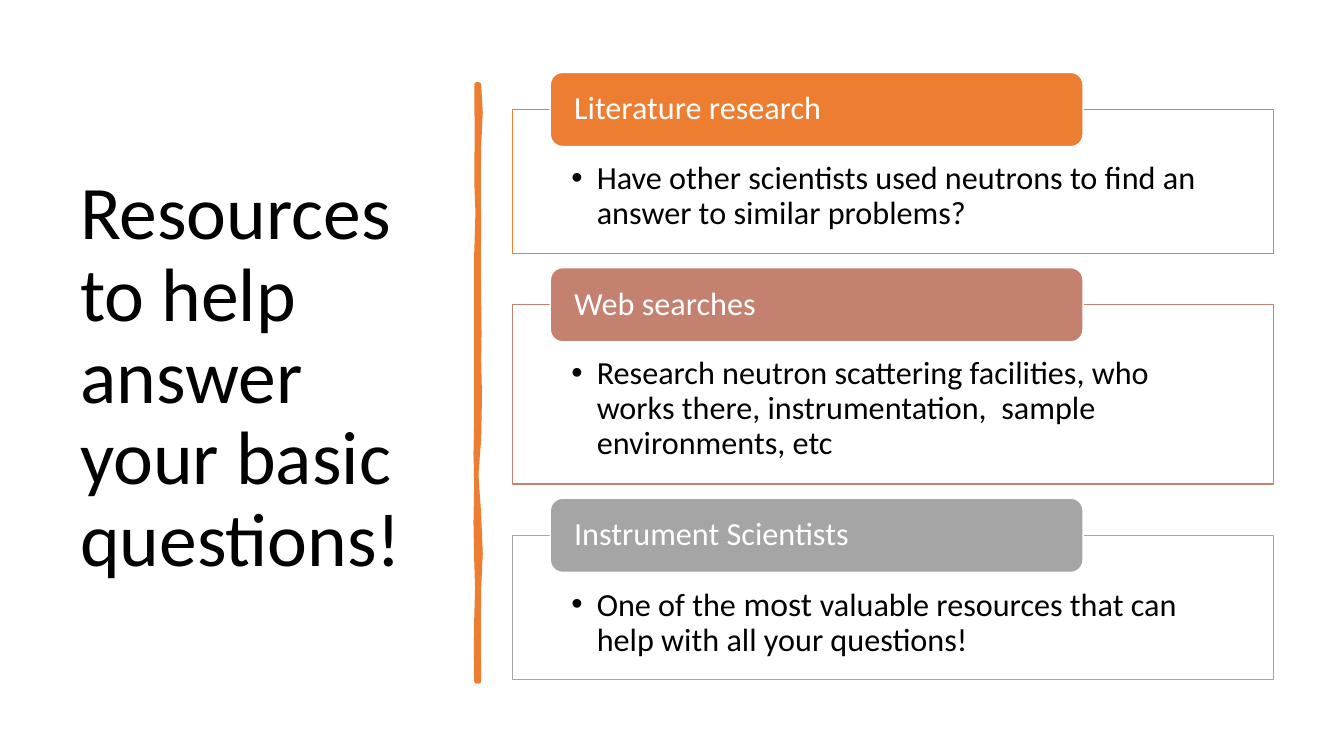
from lxml import etree
from pptx import Presentation
from pptx import util as u
from pptx.dml.color import RGBColor
from pptx.enum import shapes, text
from pptx.oxml import ns

Cm, Pt = u.Cm, u.Pt
FONT = "Calibri"
COLORS = {
    "orange": "ED7D31",
    "rose": "C48170",
    "gray": "A5A5A5",
    "white": "FFFFFF",
    "black": "000000",
}

# Heading, color, body height in cm, spans of (wording, size)
CARDS = [
    ("Literature research", "orange", 3.63,
     [("Have other scientists used neutrons to find an answer to similar problems?", 23)]),
    ("Web searches", "rose", 4.52,
     [("Research neutron scattering facilities, who works there, instrumentation,  "
       "sample environments, etc", 23)]),
    ("Instrument Scientists", "gray", 3.63,
     [("One of the ", 23), ("most ", 24),
      ("valuable resources that can help with all your questions!", 23)]),
]

# Brush stroke outline: (x from the axis, y from the top) in cm
STROKE = [
    # Right edge, downwards
    (0.03, 0), (0.07, 0.7), (0.03, 1.57), (0.02, 2.61), (0.03, 3.61), (0.02, 4.46),
    (0.03, 5.33), (0.04, 6.28), (0.03, 6.91), (0.05, 7.85), (0.03, 8.94), (-0.04, 9.83),
    (0.03, 10.82), (0.07, 11.82), (0.03, 12.7), (0.02, 13.8), (0.03, 15.04),
    # Left edge, upwards
    (-0.03, 15.04), (-0.04, 14.24), (-0.03, 13.44), (-0.01, 12.7), (-0.03, 12.01),
    (-0.05, 11.04), (-0.03, 9.98), (-0.05, 9.31), (-0.03, 8.41), (-0.03, 7.48),
    (-0.03, 6.38), (-0.03, 5.24), (-0.03, 4.22), (0, 3.22), (-0.03, 2.46),
    (-0.02, 1.25), (-0.03, 0),
]


def rgb(name):
    return RGBColor.from_string(COLORS[name])


def paint(shape, fill, line, width):
    shape.shadow.inherit = False
    shape.fill.solid()
    shape.fill.fore_color.rgb = rgb(fill)
    shape.line.color.rgb = rgb(line)
    shape.line.width = Pt(width)


def set_opacity(shape, percent):
    color = shape._element.spPr.find(ns.qn("a:solidFill"))[0]
    etree.SubElement(color, ns.qn("a:alpha")).set("val", str(percent * 1000))


def write(shape, spans, color, insets, anchor):
    """Fill the shape with one left-aligned paragraph and return it."""
    frame = shape.text_frame
    frame.word_wrap = True
    frame.vertical_anchor = anchor
    frame.margin_left, frame.margin_top, frame.margin_right, frame.margin_bottom = map(Cm, insets)
    para = frame.paragraphs[0]
    para.alignment = text.PP_ALIGN.LEFT
    para.line_spacing = 0.9
    for wording, size in spans:
        span = para.add_run()
        span.text = wording
        span.font.name = FONT
        span.font.size = Pt(size)
        span.font.color.rgb = rgb(color)
    return para


def add_bullet(para, indent):
    properties = para._p.get_or_add_pPr()
    properties.set("marL", str(Cm(indent)))
    properties.set("indent", str(-Cm(indent)))
    etree.SubElement(properties, ns.qn("a:buFont")).set("typeface", "Arial")
    etree.SubElement(properties, ns.qn("a:buChar")).set("char", "•")


def add_title(page, left, top, width, height):
    box = page.shapes.add_textbox(Cm(left), Cm(top), Cm(width), Cm(height))
    write(box, [("Resources to help answer your basic questions!", 54)], "black",
          (0.25, 0.13, 0.25, 0.13), text.MSO_ANCHOR.MIDDLE)


def add_brush_stroke(page, axis, top):
    points = [(Cm(axis + x), Cm(top + y)) for x, y in STROKE]
    builder = page.shapes.build_freeform(*points[0])
    builder.add_line_segments(points[1:])
    paint(builder.convert_to_shape(), "orange", "orange", 3.25)


def add_card(page, left, top, width, height, heading, color, spans):
    # Outlined body with a bullet
    body = page.shapes.add_shape(shapes.MSO_SHAPE.RECTANGLE, Cm(left), Cm(top), Cm(width), Cm(height))
    paint(body, "white", color, 1)
    set_opacity(body, 90)
    para = write(body, spans, "black", (1.49, 1.32, 1.49, 0.46), text.MSO_ANCHOR.TOP)
    add_bullet(para, 0.64)

    # Heading tab centered on the top edge
    tab_height = 1.87
    tab = page.shapes.add_shape(shapes.MSO_SHAPE.ROUNDED_RECTANGLE, Cm(left + width * 0.05),
                                Cm(top - tab_height / 2), Cm(width * 0.7), Cm(tab_height))
    paint(tab, color, "white", 1)
    write(tab, [(heading, 23)], "white", (0.51, 0, 0.51, 0), text.MSO_ANCHOR.MIDDLE)


def add_cards(page, left, top, width, gap):
    for heading, color, height, spans in CARDS:
        add_card(page, left, top, width, height, heading, color, spans)
        top += height + gap


def main():
    deck = Presentation()
    deck.slide_width, deck.slide_height = Cm(33.87), Cm(19.05)
    page = deck.slides.add_slide(deck.slide_layouts[6])
    add_title(page, 1.77, 1.78, 9.5, 15.52)
    add_brush_stroke(page, 12.04, 2.13)
    add_cards(page, 12.91, 2.76, 19.18, 1.29)
    deck.save("out.pptx")


if __name__ == "__main__":
    main()
